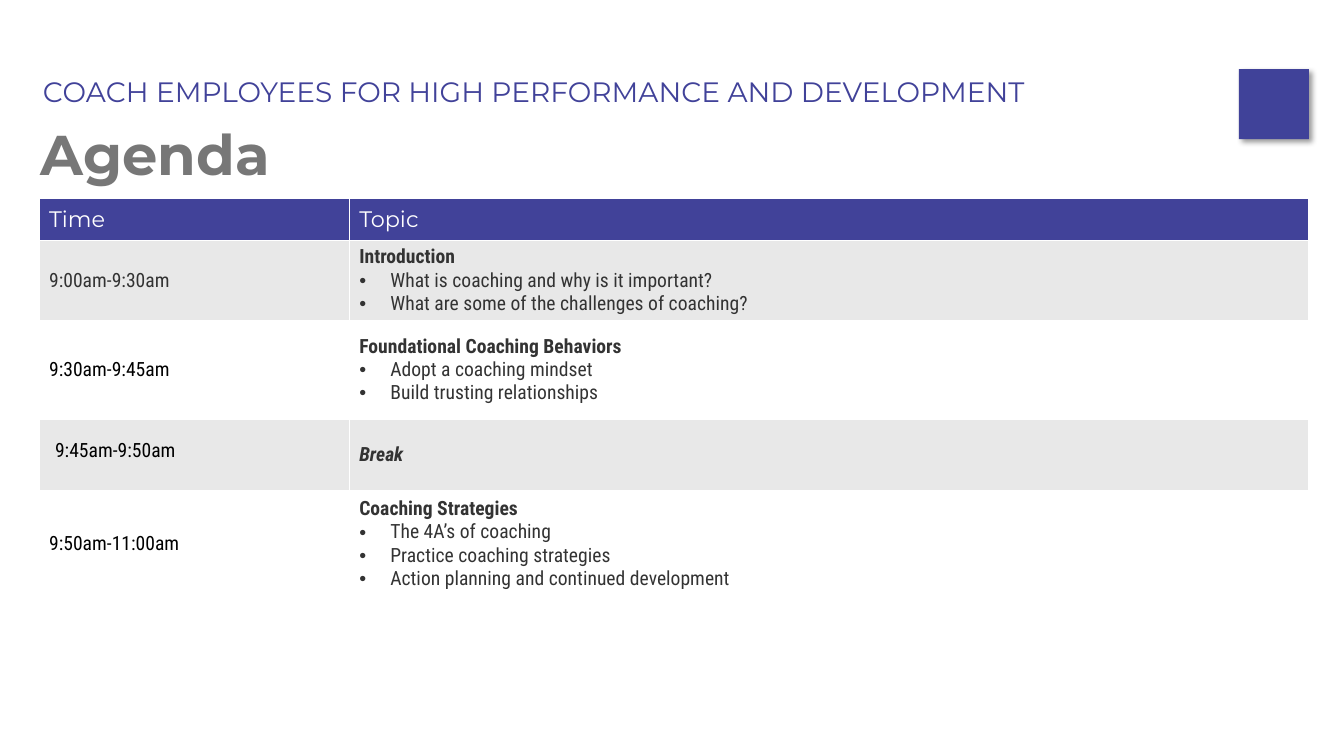
from lxml import etree
from pptx import Presentation
from pptx.dml.color import RGBColor
from pptx.enum.shapes import MSO_SHAPE
from pptx.enum.text import MSO_ANCHOR
from pptx.oxml import parse_xml
from pptx.oxml.ns import nsdecls, qn
from pptx.util import Pt

RECTANGLE = MSO_SHAPE.RECTANGLE
MIDDLE = MSO_ANCHOR.MIDDLE
PX = 9080  # EMU per pixel
HEADING_FONT = "Montserrat"
BODY_FONT = "Roboto Condensed"
COLORS = {
    "indigo": "414299",
    "square": "404299",
    "title": "777777",
    "text": "333333",
    "black": "000000",
    "band": "E8E8E8",
    "white": "FFFFFF",
}
COLUMN_WIDTHS = [310, 959]
HEADER_HEIGHT = 42
HEADERS = ["Time", "Topic"]
BREAK_MARGINS = [16, 20, 20, 28]
BULLET_INDENT = 31

# time, time colour, topic, bullets, row height
SESSIONS = [
    ("9:00am-9:30am", "text", "Introduction",
     ["What is coaching and why is it important?",
      "What are some of the challenges of coaching?"], 80),
    ("9:30am-9:45am", "black", "Foundational Coaching Behaviors",
     ["Adopt a coaching mindset", "Build trusting relationships"], 99),
    ("9:45am-9:50am", "black", "Break", [], 70),
    ("9:50am-11:00am", "black", "Coaching Strategies",
     ["The 4A’s of coaching", "Practice coaching strategies",
      "Action planning and continued development"], 106),
]


def px(*lengths):
    return [length * PX for length in lengths]


def rgb(name):
    return RGBColor.from_string(COLORS[name])


def add_span(para, text, font, size, color, bold=False, italic=False):
    span = para.add_run()
    span.text = text
    span.font.name = font
    span.font.size = Pt(size)
    span.font.bold = bold
    span.font.italic = italic
    span.font.color.rgb = rgb(color)


def add_heading(page, place, text, size, color, bold=False):
    box = page.shapes.add_textbox(*px(*place))
    box.text_frame.word_wrap = True
    add_span(box.text_frame.paragraphs[0], text, HEADING_FONT, size, color, bold)


def add_square(page, place):
    square = page.shapes.add_shape(RECTANGLE, *px(*place))
    square.fill.solid()
    square.fill.fore_color.rgb = rgb("square")
    square.line.fill.background()
    square.shadow.inherit = False
    effects = square._element.spPr.find(qn("a:effectLst"))
    effects.append(parse_xml(
        f'<a:outerShdw {nsdecls("a")} blurRad="{Pt(4)}" dist="{Pt(3)}" '
        f'dir="2700000" algn="tl" rotWithShape="0"><a:srgbClr val="{COLORS["black"]}">'
        '<a:alpha val="40000"/></a:srgbClr></a:outerShdw>'))


def style_cell(cell, fill):
    """Centre the cell vertically, fill it and give it thin white borders."""
    cell.vertical_anchor = MIDDLE
    properties = cell._tc.get_or_add_tcPr()
    for side in ("lnL", "lnR", "lnT", "lnB"):
        border = etree.SubElement(properties, qn(f"a:{side}"), w=str(Pt(1)))
        solid = etree.SubElement(border, qn("a:solidFill"))
        etree.SubElement(solid, qn("a:srgbClr"), val=COLORS["white"])
    cell.fill.solid()
    cell.fill.fore_color.rgb = rgb(fill)


def add_bullet(frame, text):
    para = frame.add_paragraph()
    properties = para._p.get_or_add_pPr()
    properties.set("marL", str(BULLET_INDENT * PX))
    properties.set("indent", str(-BULLET_INDENT * PX))
    etree.SubElement(properties, qn("a:buFont"), typeface="Arial")
    etree.SubElement(properties, qn("a:buChar"), char="•")
    add_span(para, text, BODY_FONT, 14, "text")


def fill_session(time_cell, topic_cell, session, fill):
    time, time_color, topic, bullets, _ = session
    is_break = not bullets
    for cell in (time_cell, topic_cell):
        style_cell(cell, fill)
    add_span(time_cell.text_frame.paragraphs[0], time, BODY_FONT, 14, time_color)
    if is_break:
        (time_cell.margin_left, time_cell.margin_top,
         time_cell.margin_right, time_cell.margin_bottom) = px(*BREAK_MARGINS)
    frame = topic_cell.text_frame
    add_span(frame.paragraphs[0], topic, BODY_FONT, 14, "text", True, is_break)
    for bullet in bullets:
        add_bullet(frame, bullet)


def add_agenda(page, left, top):
    heights = [HEADER_HEIGHT] + [session[-1] for session in SESSIONS]
    table = page.shapes.add_table(
        len(heights), len(COLUMN_WIDTHS),
        *px(left, top, sum(COLUMN_WIDTHS), sum(heights))).table
    for column, width in zip(table.columns, px(*COLUMN_WIDTHS)):
        column.width = width
    for row, height in zip(table.rows, px(*heights)):
        row.height = height
    for index, header in enumerate(HEADERS):
        cell = table.cell(0, index)
        style_cell(cell, "indigo")
        add_span(cell.text_frame.paragraphs[0], header, HEADING_FONT, 16, "white")
    for index, session in enumerate(SESSIONS, start=1):
        fill = "band" if index % 2 else "white"
        fill_session(table.cell(index, 0), table.cell(index, 1), session, fill)


def main():
    deck = Presentation()
    deck.slide_width, deck.slide_height = px(1343, 755)
    page = deck.slides.add_slide(deck.slide_layouts[6])
    add_agenda(page, 39, 198)
    add_heading(page, (31, 114, 868, 65), "Agenda", 40, "title", True)
    add_heading(page, (33, 69, 1122, 40),
                "COACH EMPLOYEES FOR HIGH PERFORMANCE AND DEVELOPMENT", 20, "indigo")
    add_square(page, (1238, 69, 70, 70))
    deck.save("out.pptx")


if __name__ == "__main__":
    main()
